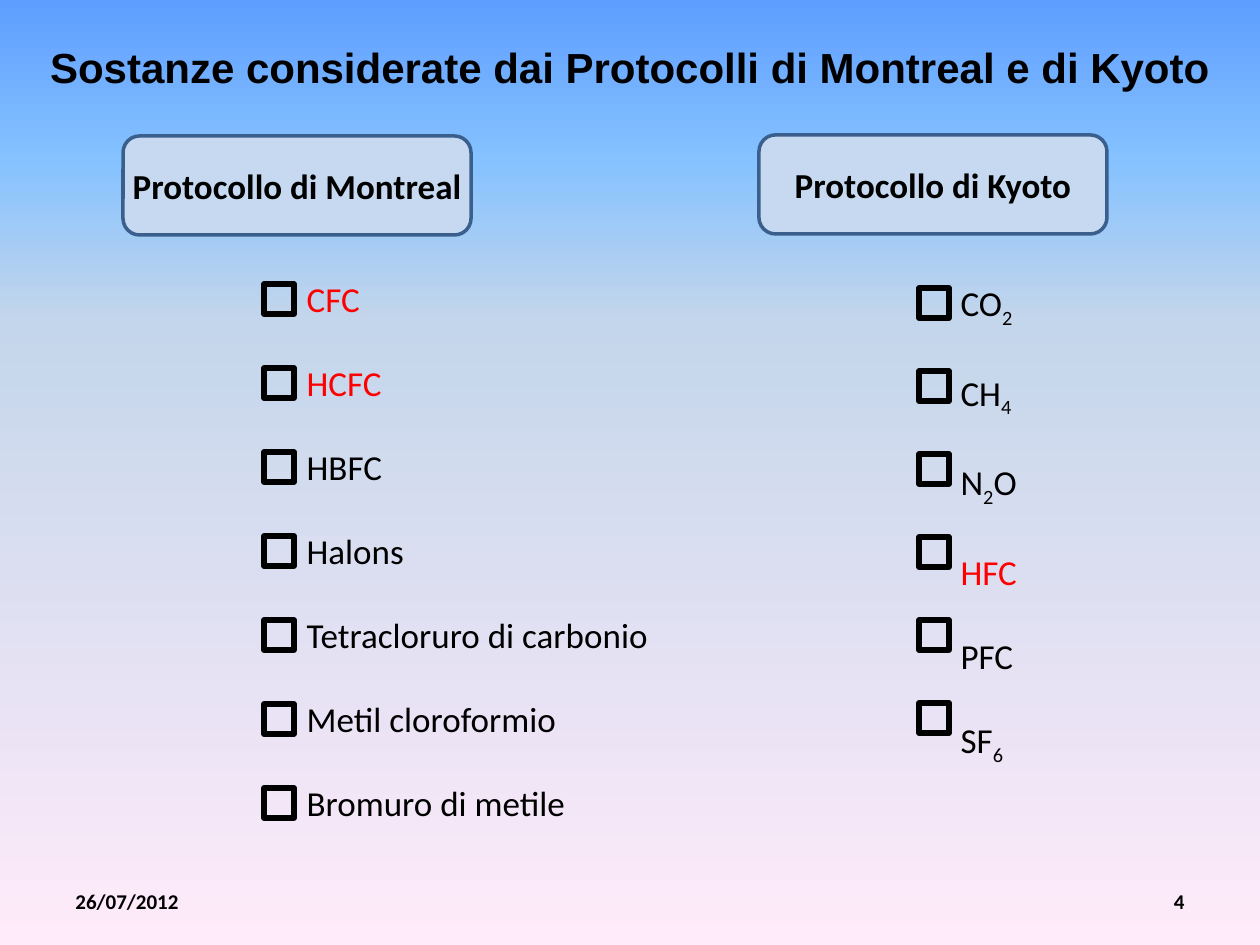
from pptx import Presentation
from pptx.dml.color import RGBColor
from pptx.enum.shapes import MSO_SHAPE
from pptx.enum.text import MSO_ANCHOR, MSO_AUTO_SIZE, PP_ALIGN
from pptx.oxml.ns import qn
from pptx.util import Emu, Pt
from lxml import etree

RECT, ROUNDED = MSO_SHAPE.RECTANGLE, MSO_SHAPE.ROUNDED_RECTANGLE
TOP, MIDDLE = MSO_ANCHOR.TOP, MSO_ANCHOR.MIDDLE
LEFT, CENTER, RIGHT = PP_ALIGN.LEFT, PP_ALIGN.CENTER, PP_ALIGN.RIGHT
BLACK = RGBColor(0x00, 0x00, 0x00)
RED = RGBColor(0xFF, 0x00, 0x00)
PALE_BLUE = RGBColor(0xC6, 0xD9, 0xF1)
DARK_BLUE = RGBColor(0x3A, 0x5F, 0x8C)
SKY = [(0, RGBColor(0x5E, 0x9E, 0xFF)), (17, RGBColor(0x85, 0xC2, 0xFF)),
       (34, RGBColor(0xC4, 0xD6, 0xEB)), (100, RGBColor(0xFF, 0xEB, 0xFA))]

# Content
TITLE = "Sostanze considerate dai Protocolli di Montreal e di Kyoto"
PROTOCOLS = [
    {"heading": "Protocollo di Montreal", "heading_at": (123, 136, 348, 99),
     "substances": ["CFC", "HCFC", "HBFC", "Halons", "Tetracloruro di carbonio",
                    "Metil cloroformio", "Bromuro di metile"],
     "list_at": (294, 271, 390, 564), "box_at": (264, 284), "box_pitch": 84},
    {"heading": "Protocollo di Kyoto", "heading_at": (759, 135, 348, 99),
     "substances": ["CO2", "CH4", "N2O", "HFC", "PFC", "SF6"],
     "list_at": (948, 275, 120, 479), "box_at": (919, 288), "box_pitch": 83},
]
HIGHLIGHTED = {"CFC", "HCFC", "HFC"}
FOOTERS = [("26/07/2012", (63, 876, 294, 50), LEFT),
           ("4", (903, 876, 294, 50), RIGHT)]
BOX_SIZE = 30

TITLE_FONT = {"name": "Arial", "size": Pt(24), "bold": True}
HEADING_FONT = {"name": "Calibri", "size": Pt(20), "bold": True}
LIST_FONT = {"name": "Calibri", "size": Pt(20), "bold": False}
FOOTER_FONT = {"name": "Calibri", "size": Pt(12), "bold": True}


def px(length):
    return Emu(round(length * 914400 / 126))


def place(part, at):
    part.left, part.top, part.width, part.height = map(px, at)


def set_frame(part, anchor):
    frame = part.text_frame
    frame.word_wrap = True
    frame.auto_size = MSO_AUTO_SIZE.NONE
    frame.vertical_anchor = anchor
    return frame


def add_run(paragraph, text, font, color=BLACK):
    run = paragraph.add_run()
    run.text = text
    for key, value in font.items():
        setattr(run.font, key, value)
    run.font.color.rgb = color
    return run


def write_line(part, text, font, align, anchor):
    paragraph = set_frame(part, anchor).paragraphs[0]
    paragraph.alignment = align
    add_run(paragraph, text, font)


def add_outlined(kind, at, line_color, line_width, fill_color=None):
    shape = slide.shapes.add_shape(kind, *map(px, at))
    shape.shadow.inherit = False
    if fill_color is None:
        shape.fill.background()
    else:
        shape.fill.solid()
        shape.fill.fore_color.rgb = fill_color
    shape.line.color.rgb = line_color
    shape.line.width = Pt(line_width)
    return shape


def write_substances(part, substances):
    frame = set_frame(part, TOP)
    for i, substance in enumerate(substances):
        paragraph = frame.add_paragraph() if i else frame.paragraphs[0]
        paragraph.space_before, paragraph.space_after = Pt(0), Pt(24)
        properties = paragraph._p.get_or_add_pPr()
        properties.set("marL", "0")
        properties.set("indent", "0")
        etree.SubElement(properties, qn("a:buNone"))
        color = RED if substance in HIGHLIGHTED else BLACK
        # Digits in a formula are subscripts
        formula = any(c.isdigit() for c in substance)
        for piece in substance if formula else [substance]:
            run = add_run(paragraph, piece, LIST_FONT, color)
            if piece.isdigit():
                run._r.get_or_add_rPr().set("baseline", "-25000")


prs = Presentation()
prs.slide_width, prs.slide_height = px(1260), px(945)
slide = prs.slides.add_slide(prs.slide_layouts[3])  # Two Content
title, *lists = slide.placeholders

# Background gradient, top to bottom
background = slide.background.fill
background.gradient()
background.gradient_angle = 270
stops = next(slide._element.iter(qn("a:gsLst")))
for stop in list(stops):
    stops.remove(stop)
for percent, color in SKY:
    stop = etree.SubElement(stops, qn("a:gs"), pos=str(percent * 1000))
    etree.SubElement(stop, qn("a:srgbClr"), val=str(color))

# Title
place(title, (0, 35, 1260, 64))
write_line(title, TITLE, TITLE_FONT, CENTER, TOP)

# Protocols: heading, substances and their checkboxes
for protocol, substance_list in zip(PROTOCOLS, lists):
    heading = add_outlined(ROUNDED, protocol["heading_at"], DARK_BLUE, 2, PALE_BLUE)
    heading.text_frame.margin_left = heading.text_frame.margin_right = 0
    write_line(heading, protocol["heading"], HEADING_FONT, CENTER, MIDDLE)

    place(substance_list, protocol["list_at"])
    write_substances(substance_list, protocol["substances"])

    box_left, box_top = protocol["box_at"]
    for i in range(len(protocol["substances"])):
        top = box_top + i * protocol["box_pitch"]
        add_outlined(RECT, (box_left, top, BOX_SIZE, BOX_SIZE), BLACK, 3)

# Date and slide number
for text, at, align in FOOTERS:
    footer = slide.shapes.add_textbox(*map(px, at))
    write_line(footer, text, FOOTER_FONT, align, MIDDLE)

prs.save("out.pptx")
